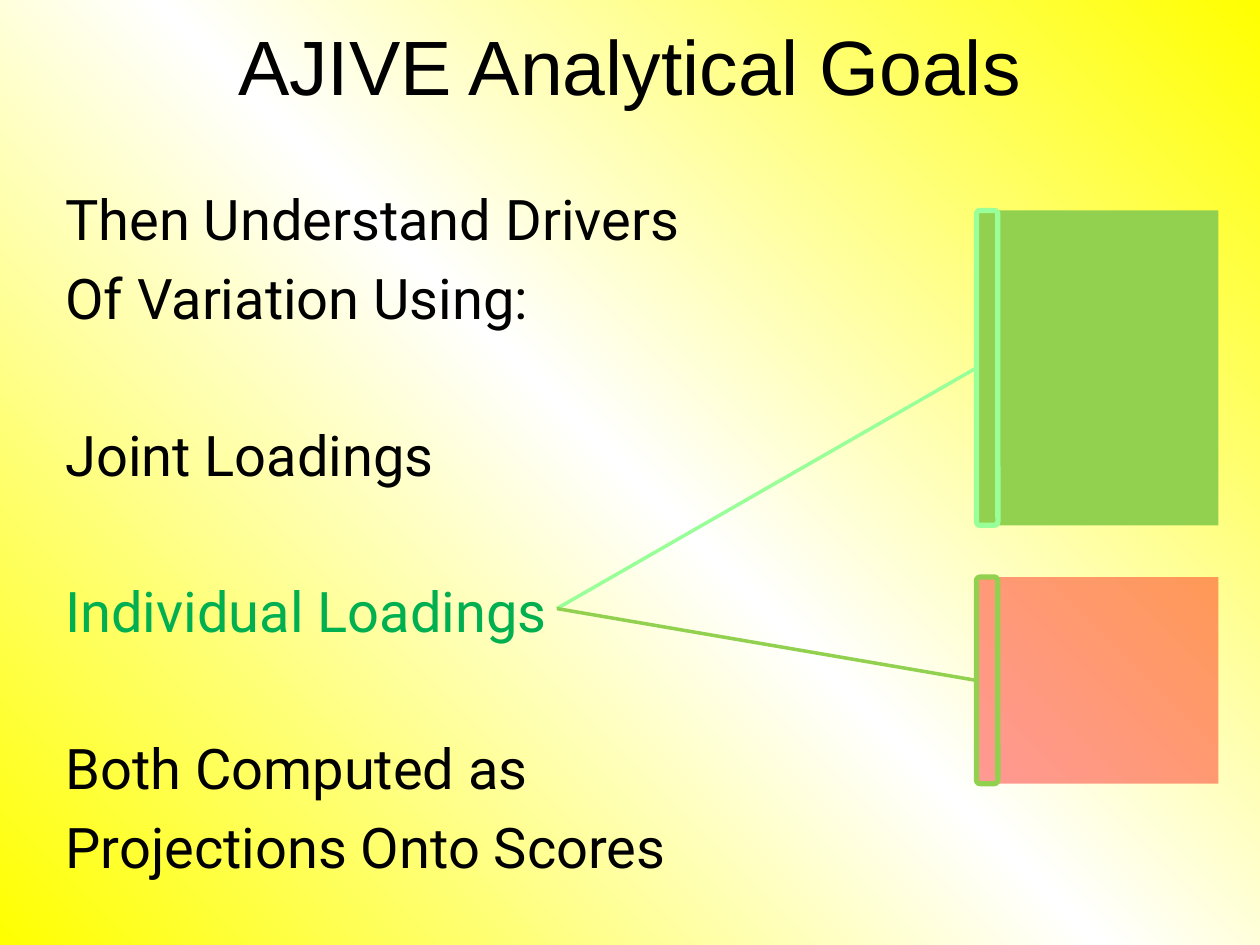
from dataclasses import dataclass

from lxml.etree import SubElement
from pptx import Presentation
from pptx.dml.color import RGBColor
from pptx.enum.shapes import MSO_CONNECTOR, MSO_SHAPE
from pptx.enum.text import MSO_ANCHOR, PP_ALIGN
from pptx.oxml import parse_xml
from pptx.oxml.ns import nsdecls, qn
from pptx.slide import Slide
from pptx.util import Inches, Pt


@dataclass(frozen=True)
class Theme:
    text: str = "000000"
    accent: str = "00B050"
    green: str = "92D050"
    mint: str = "99FF99"
    red: str = "FF0000"
    yellow: str = "FFFF00"
    white: str = "FFFFFF"
    title_font: str = "Arial"
    body_font: str = "Roboto"
    title_size: float = 44
    body_size: float = 32
    line_pitch: float = 44.8
    connector_width: float = 2
    outline_width: float = 3


@dataclass(frozen=True)
class Line:
    text: str
    color: str
    starts_group: bool = False


@dataclass(frozen=True)
class Block:
    top: float
    height: float
    fill: str
    outline: str
    opacity: int = 100


THEME = Theme()
BLOCK_LEFT, BLOCK_WIDTH, COLUMN_WIDTH = 7.75, 1.92, 0.17
LABEL_POINT = (4.42, 4.83)

LINES = [
    Line("Then Understand Drivers", THEME.text),
    Line("Of Variation Using:", THEME.text),
    Line("Joint Loadings", THEME.text, True),
    Line("Individual Loadings", THEME.accent, True),
    Line("Both Computed as", THEME.text, True),
    Line("Projections Onto Scores", THEME.text),
]
BLOCKS = [
    Block(1.67, 2.5, THEME.green, THEME.mint),
    Block(4.58, 1.64, THEME.red, THEME.green, 40),
]


def paint_background(page: Slide) -> None:
    colors = (THEME.yellow, THEME.white, THEME.yellow)
    stops = "".join(
        f'<a:gs pos="{index * 50000}"><a:srgbClr val="{color}"/></a:gs>'
        for index, color in enumerate(colors)
    )
    background = parse_xml(
        f'<p:bg {nsdecls("p", "a")}><p:bgPr><a:gradFill rotWithShape="1">'
        f'<a:gsLst>{stops}</a:gsLst><a:lin ang="8100000" scaled="0"/>'
        "</a:gradFill><a:effectLst/></p:bgPr></p:bg>"
    )
    page.element.cSld.insert(0, background)


def add_span(para, text: str, font: str, size: float, color: str) -> None:
    span = para.add_run()
    span.text = text
    span.font.name = font
    span.font.size = Pt(size)
    span.font.color.rgb = RGBColor.from_string(color)


def write_title(page: Slide, text: str) -> None:
    box = page.shapes.title
    box.left, box.top = Inches(0.5), Inches(0)
    box.width, box.height = Inches(9), Inches(1.03)
    box.text_frame.vertical_anchor = MSO_ANCHOR.MIDDLE
    para = box.text_frame.paragraphs[0]
    para.alignment = PP_ALIGN.CENTER
    add_span(para, text, THEME.title_font, THEME.title_size, THEME.text)


def write_body(page: Slide, lines: list[Line]) -> None:
    box = page.shapes.add_textbox(
        Inches(0.42), Inches(1.38), Inches(9.33), Inches(5.7)
    )
    frame = box.text_frame
    frame.word_wrap = True
    frame.margin_top = 0
    for index, line in enumerate(lines):
        para = frame.add_paragraph() if index else frame.paragraphs[0]
        para.line_spacing = Pt(THEME.line_pitch)
        para.space_before = Pt(THEME.line_pitch if line.starts_group else 0)
        add_span(para, line.text, THEME.body_font, THEME.body_size, line.color)


def draw_block(page: Slide, block: Block) -> None:
    shape = page.shapes.add_shape(
        MSO_SHAPE.RECTANGLE, Inches(BLOCK_LEFT), Inches(block.top),
        Inches(BLOCK_WIDTH), Inches(block.height),
    )
    shape.shadow.inherit = False
    shape.line.fill.background()
    shape.fill.solid()
    shape.fill.fore_color.rgb = RGBColor.from_string(block.fill)
    if block.opacity < 100:
        color = shape.element.spPr.find(qn("a:solidFill")).find(qn("a:srgbClr"))
        SubElement(color, qn("a:alpha"), val=str(block.opacity * 1000))


def draw_connector(page: Slide, block: Block) -> None:
    label_x, label_y = LABEL_POINT
    connector = page.shapes.add_connector(
        MSO_CONNECTOR.STRAIGHT, Inches(BLOCK_LEFT),
        Inches(block.top + block.height / 2), Inches(label_x), Inches(label_y),
    )
    connector.line.color.rgb = RGBColor.from_string(block.outline)
    connector.line.width = Pt(THEME.connector_width)
    SubElement(connector.element.spPr, qn("a:effectLst"))


def draw_column(page: Slide, block: Block) -> None:
    shape = page.shapes.add_shape(
        MSO_SHAPE.ROUNDED_RECTANGLE, Inches(BLOCK_LEFT), Inches(block.top),
        Inches(COLUMN_WIDTH), Inches(block.height),
    )
    shape.shadow.inherit = False
    shape.fill.background()
    shape.line.color.rgb = RGBColor.from_string(block.outline)
    shape.line.width = Pt(THEME.outline_width)


def main() -> None:
    deck = Presentation()
    deck.slide_width, deck.slide_height = Inches(10), Inches(7.5)
    page = deck.slides.add_slide(deck.slide_layouts[5])
    paint_background(page)
    write_title(page, "AJIVE Analytical Goals")
    write_body(page, LINES)
    for draw in (draw_block, draw_connector, draw_column):
        for block in BLOCKS:
            draw(page, block)
    deck.save("out.pptx")


if __name__ == "__main__":
    main()
